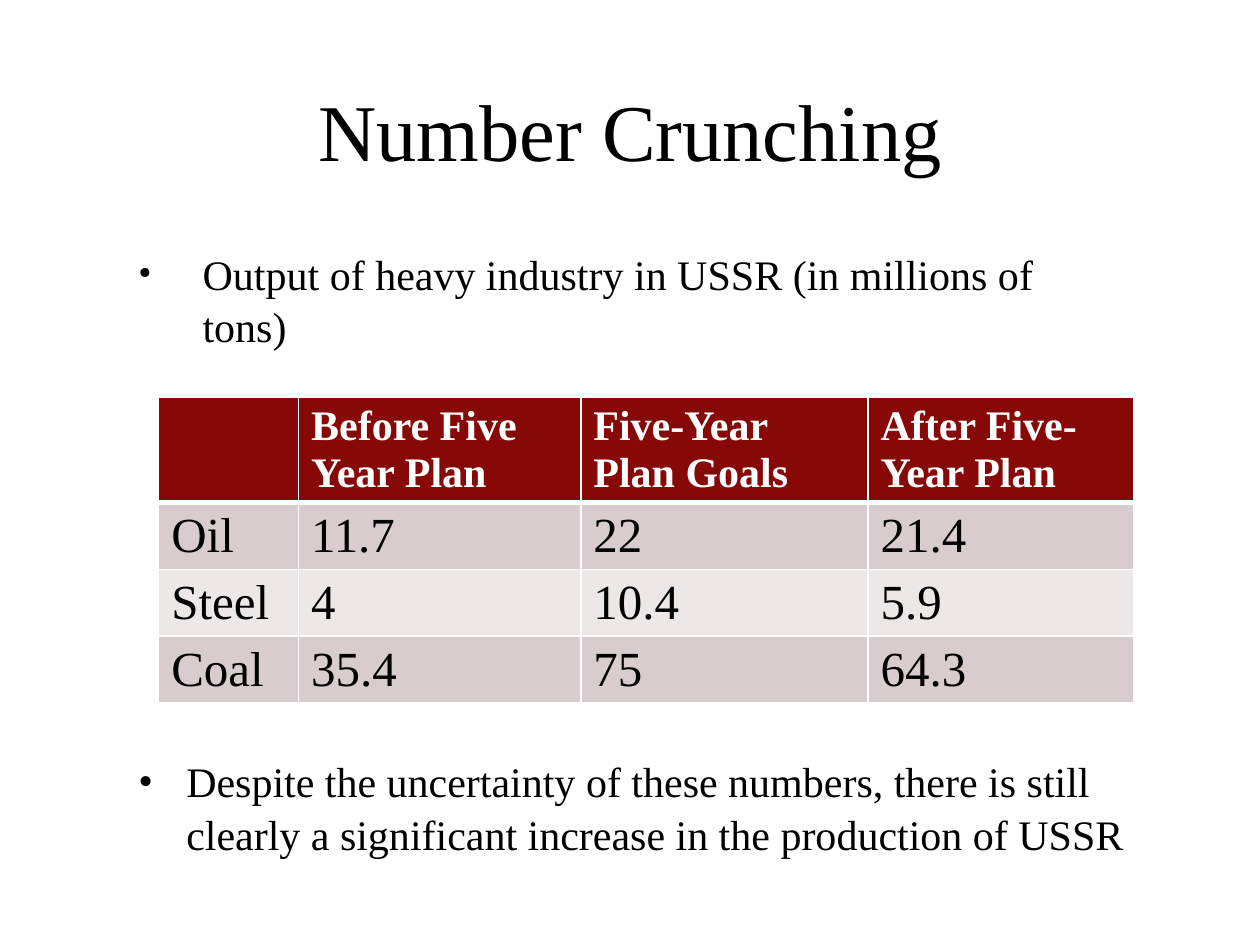
from lxml.etree import SubElement
from pptx import Presentation
from pptx.dml.color import RGBColor
from pptx.enum.text import MSO_ANCHOR, PP_ALIGN
from pptx.oxml.ns import qn
from pptx.util import Emu, Inches, Pt

# Content
TITLE = "Number Crunching"
BULLETS = [  # text, (left, top, width, height), indent, bullet size in %
    ("Output of heavy industry in USSR (in millions of tons)",
     (1, 1.9, 8, 0.74), 0.51, 90),
    ("Despite the uncertainty of these numbers, there is still clearly "
     "a significant increase in the production of USSR",
     (1, 5.93, 8.22, 0.91), 0.38, 100),
]
OUTPUT = [
    ("", "Before Five Year Plan", "Five-Year Plan Goals", "After Five-Year Plan"),
    ("Oil", "11.7", "22", "21.4"),
    ("Steel", "4", "10.4", "5.9"),
    ("Coal", "35.4", "75", "64.3"),
]
COLUMN_WIDTHS = (1.11, 2.24, 2.28, 2.11)
ROW_HEIGHTS = (0.83,) + (0.53,) * 3

FONT = "Times New Roman"
BLACK = RGBColor(0, 0, 0)
WHITE = RGBColor(255, 255, 255)
MAROON = RGBColor(0x86, 0x09, 0x08)
BANDS = (RGBColor(0xED, 0xE7, 0xE7), RGBColor(0xD9, 0xCC, 0xCC))


def style(font, size, color=BLACK, bold=False):
    font.name, font.size, font.bold = FONT, Pt(size), bold
    font.color.rgb = color


def place(shape, box):
    shape.left, shape.top, shape.width, shape.height = map(Inches, box)


def add_bullet(slide, text, box, indent, bullet_size):
    frame = slide.shapes.add_textbox(*map(Inches, box)).text_frame
    frame.word_wrap = True
    frame.text = text
    paragraph = frame.paragraphs[0]
    paragraph.line_spacing = 1.05
    props = paragraph._p.get_or_add_pPr()
    props.set("marL", str(Inches(indent)))
    props.set("indent", str(-Inches(indent)))
    SubElement(props, qn("a:buSzPct"), val=str(bullet_size * 1000))
    SubElement(props, qn("a:buFont"), typeface=FONT)
    SubElement(props, qn("a:buChar"), char="•")
    style(paragraph.runs[0].font, 24)


def add_borders(cell, widths):
    props = cell._tc.get_or_add_tcPr()
    for index, (side, width) in enumerate(widths.items()):
        line = props.makeelement(qn(f"a:ln{side}"), {"w": str(Pt(width))})
        fill = SubElement(line, qn("a:solidFill"))
        SubElement(fill, qn("a:srgbClr"), val=str(WHITE))
        props.insert(index, line)


def add_output_table(slide):
    size = sum(COLUMN_WIDTHS), sum(ROW_HEIGHTS)
    table = slide.shapes.add_table(
        len(OUTPUT), len(COLUMN_WIDTHS), *map(Inches, (1.26, 3.15) + size)).table
    for column, width in zip(table.columns, COLUMN_WIDTHS):
        column.width = Inches(width)
    for r, (row, height) in enumerate(zip(table.rows, ROW_HEIGHTS)):
        row.height = Inches(height)
        header = r == 0
        for cell, text in zip(row.cells, OUTPUT[r]):
            cell.text = text
            cell.fill.solid()
            cell.fill.fore_color.rgb = MAROON if header else BANDS[r % 2]
            style(cell.text_frame.paragraphs[0].font, 24 if header else 28,
                  WHITE if header else BLACK, header)
            for run in cell.text_frame.paragraphs[0].runs:
                style(run.font, 24 if header else 28,
                      WHITE if header else BLACK, header)
            add_borders(cell, {"L": 1, "R": 1, "T": 3 if r == 1 else 1,
                               "B": 3 if header else 1})


def main():
    deck = Presentation()
    deck.slide_width, deck.slide_height = Inches(10), Inches(7.5)
    slide = deck.slides.add_slide(deck.slide_layouts[5])

    # Title
    title = slide.shapes.title
    place(title, (1, 0.55, 8, 0.95))
    title.text_frame.text = TITLE
    title.text_frame.vertical_anchor = MSO_ANCHOR.MIDDLE
    title.text_frame.paragraphs[0].alignment = PP_ALIGN.CENTER
    style(title.text_frame.paragraphs[0].runs[0].font, 46)

    # Bullets above and below the table
    add_output_table(slide)
    for bullet in BULLETS:
        add_bullet(slide, *bullet)

    deck.save("out.pptx")


if __name__ == "__main__":
    main()
